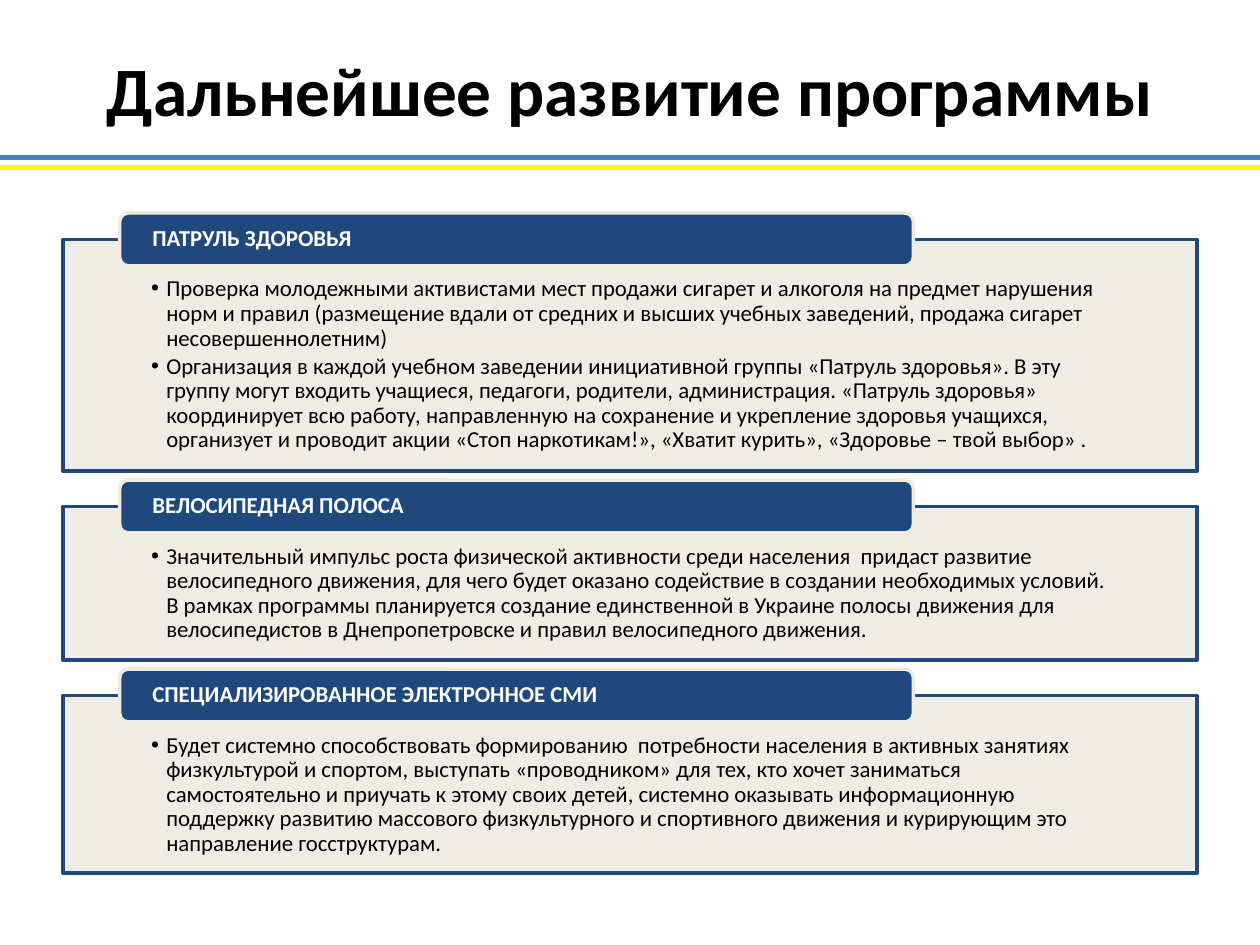
from dataclasses import dataclass

from lxml.etree import SubElement
from pptx import Presentation
from pptx.dml.color import RGBColor
from pptx.enum.shapes import MSO_CONNECTOR, MSO_SHAPE
from pptx.enum.text import MSO_ANCHOR, PP_ALIGN
from pptx.oxml.ns import qn
from pptx.util import Inches, Pt


@dataclass(frozen=True)
class Theme:
    font: str = "Calibri"
    ink: str = "000000"
    white: str = "FFFFFF"
    navy: str = "1F497D"
    cream: str = "EEECE1"
    blue: str = "4B7EBC"
    yellow: str = "FFFF00"
    head: float = 39.6
    body: float = 13
    edge: float = 2
    rule: float = 3


THEME = Theme()
GAP = 0.28
CARDS = [
    ("ПАТРУЛЬ ЗДОРОВЬЯ", 1.84, [
        "Проверка молодежными активистами мест продажи сигарет и алкоголя на предмет "
        "нарушения норм и правил (размещение вдали от средних и высших учебных заведений, "
        "продажа сигарет несовершеннолетним)",
        "Организация в каждой учебном заведении инициативной группы «Патруль здоровья». "
        "В эту группу могут входить учащиеся, педагоги, родители, администрация. «Патруль "
        "здоровья» координирует всю работу, направленную на сохранение и укрепление "
        "здоровья учащихся, организует и проводит акции «Стоп наркотикам!», «Хватит "
        "курить», «Здоровье – твой выбор» .",
    ]),
    ("ВЕЛОСИПЕДНАЯ ПОЛОСА", 1.22, [
        "Значительный импульс роста физической активности среди населения  придаст "
        "развитие велосипедного движения, для чего будет оказано содействие в создании "
        "необходимых условий. В рамках программы планируется создание единственной в "
        "Украине полосы движения для велосипедистов в Днепропетровске и правил "
        "велосипедного движения.",
    ]),
    ("СПЕЦИАЛИЗИРОВАННОЕ ЭЛЕКТРОННОЕ СМИ", 1.41, [
        "Будет системно способствовать формированию  потребности населения в активных "
        "занятиях физкультурой и спортом, выступать «проводником» для тех, кто хочет "
        "заниматься  самостоятельно и приучать к этому своих детей, системно оказывать "
        "информационную поддержку развитию массового физкультурного и спортивного движения "
        "и курирующим это направление госструктурам.",
    ]),
]


def color(code):
    return RGBColor.from_string(code)


def style(para, size, code, bold=False):
    for run in para.runs:
        font = run.font
        font.name, font.size, font.bold = THEME.font, Pt(size), bold
        font.color.rgb = color(code)


def inset(frame, left, top, right, bottom):
    frame.word_wrap = True
    frame.margin_left, frame.margin_top = Inches(left), Inches(top)
    frame.margin_right, frame.margin_bottom = Inches(right), Inches(bottom)


def add_box(slide, kind, box, fill, line):
    shape = slide.shapes.add_shape(kind, *map(Inches, box))
    shape.shadow.inherit = False
    shape.fill.solid()
    shape.fill.fore_color.rgb = color(fill)
    shape.line.color.rgb = color(line)
    shape.line.width = Pt(THEME.edge)
    return shape


def add_bullet(para):
    props = para._p.get_or_add_pPr()
    props.set("marL", str(Inches(0.12)))
    props.set("indent", str(-Inches(0.12)))
    SubElement(props, qn("a:buFont")).set("typeface", "Arial")
    SubElement(props, qn("a:buChar")).set("char", "•")


def add_title(slide, box, text):
    title = slide.shapes.title
    title.left, title.top, title.width, title.height = map(Inches, box)
    frame = title.text_frame
    frame.text = text
    frame.word_wrap = True
    frame.vertical_anchor = MSO_ANCHOR.MIDDLE
    para = frame.paragraphs[0]
    para.alignment = PP_ALIGN.CENTER
    style(para, THEME.head, THEME.ink, True)


def add_rules(slide, box):
    left, top, width, height = box
    for code, y in ((THEME.blue, top), (THEME.yellow, top + height)):
        line = slide.shapes.add_connector(
            MSO_CONNECTOR.STRAIGHT, Inches(left), Inches(y), Inches(left + width), Inches(y))
        line.line.color.rgb = color(code)
        line.line.width = Pt(THEME.rule)
        SubElement(line._element.spPr, qn("a:effectLst"))


def add_panel(slide, box, items):
    panel = add_box(slide, MSO_SHAPE.RECTANGLE, box, THEME.cream, THEME.navy)
    tint = panel._element.spPr.find(qn("a:solidFill"))[0]
    SubElement(tint, qn("a:alpha")).set("val", "90000")
    frame = panel.text_frame
    inset(frame, 0.7, 0.3, 0.7, 0.1)
    frame.vertical_anchor = MSO_ANCHOR.TOP
    frame.text = "\n".join(items)
    for para in frame.paragraphs:
        para.alignment = PP_ALIGN.LEFT
        para.line_spacing = 0.9
        para.space_after = Pt(2)
        add_bullet(para)
        style(para, THEME.body, THEME.ink)


def add_label(slide, box, text):
    label = add_box(slide, MSO_SHAPE.ROUNDED_RECTANGLE, box, THEME.navy, THEME.cream)
    frame = label.text_frame
    inset(frame, 0.24, 0, 0.24, 0)
    frame.vertical_anchor = MSO_ANCHOR.MIDDLE
    frame.text = text
    para = frame.paragraphs[0]
    para.alignment = PP_ALIGN.LEFT
    para.line_spacing = 0.9
    style(para, THEME.body, THEME.white, True)


def add_card(slide, box, name, items):
    left, top, width, height = box
    add_panel(slide, box, items)
    add_label(slide, (left + 0.05 * width, top - 0.21, 0.7 * width, 0.42), name)


def main():
    deck = Presentation()
    deck.slide_width, deck.slide_height = Inches(10), Inches(7.5)
    slide = deck.slides.add_slide(deck.slide_layouts[5])
    add_rules(slide, (0, 1.25, 10, 0.08))
    add_title(slide, (0.39, 0.31, 9.22, 0.79), "Дальнейшее развитие программы")
    top = 1.9
    for name, height, items in CARDS:
        add_card(slide, (0.5, top, 9, height), name, items)
        top += height + GAP
    deck.save("out.pptx")


if __name__ == "__main__":
    main()
